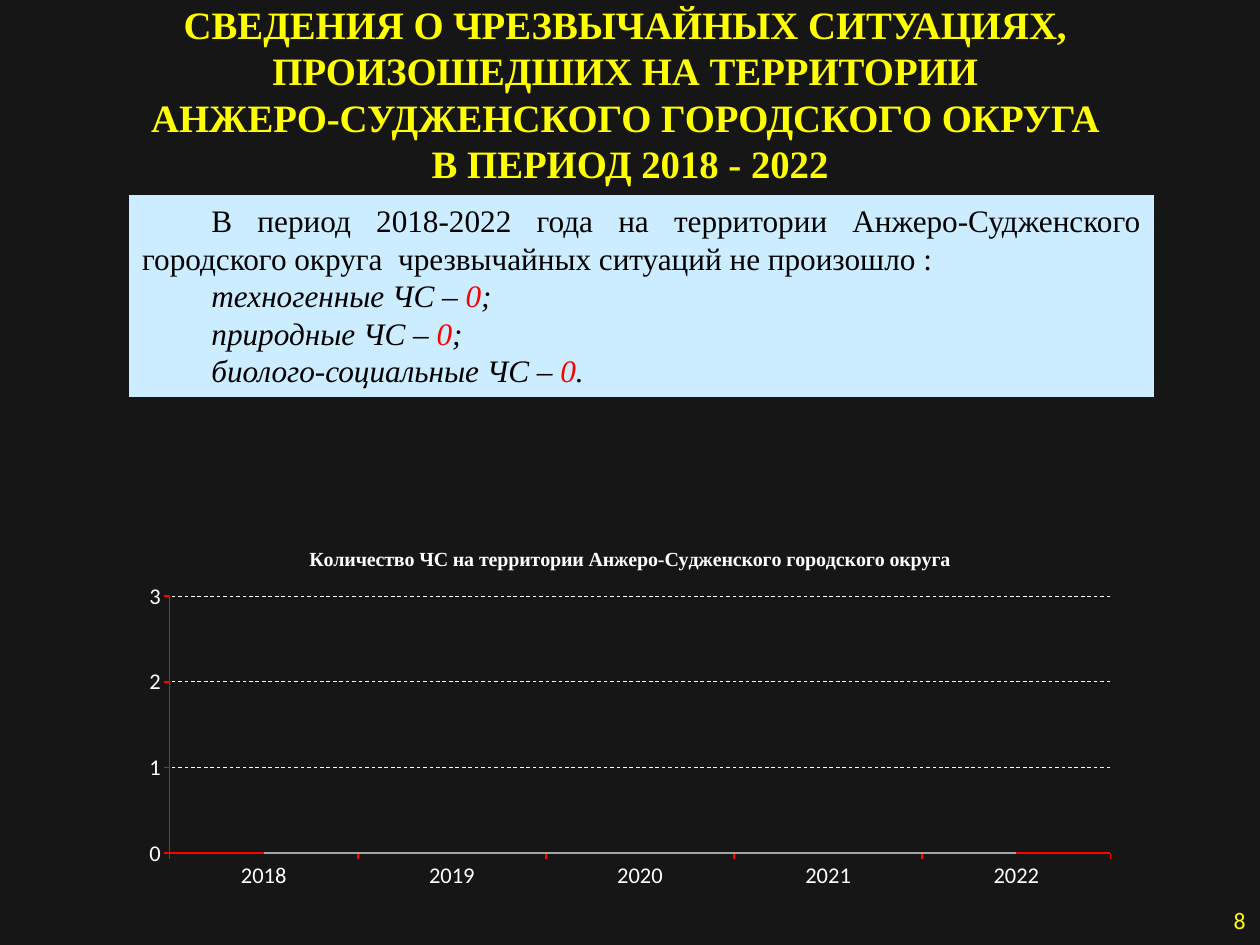
from lxml import etree
from pptx import Presentation
from pptx import util as u
from pptx.chart.data import CategoryChartData
from pptx.dml.color import RGBColor
from pptx.enum import chart as ch, dml, text
from pptx.oxml import parse_xml
from pptx.oxml.ns import nsdecls, qn

THEME = {
    "back": "171616", "head": "FFFF00", "panel": "CCECFF", "ink": "000000",
    "mark": "FF0000", "light": "FFFFFF", "lines": ["C2DFFD", "F29054", "A5A5A5"],
    "serif": "Times New Roman", "sans": "Calibri",
    "title": 31, "body": 25, "num": 19, "axis": 18, "label": 16,
}

deck = Presentation()
deck.slide_width, deck.slide_height = u.Inches(14), u.Inches(10.5)
COL, ROW = deck.slide_width / 100, deck.slide_height / 100


def place(box, x, y, w, h):
    """Set a text box on the 100 x 100 grid, with its margins."""
    box.left, box.top = int(x * COL), int(y * ROW)
    box.width, box.height = int(w * COL), int(h * ROW)
    frame = box.text_frame
    frame.word_wrap = True
    frame.auto_size = text.MSO_AUTO_SIZE.NONE
    frame.margin_left = frame.margin_right = u.Inches(0.16)
    frame.margin_top = frame.margin_bottom = u.Inches(0.08)
    return frame


def style(font, face, size, color, bold=False):
    font.name, font.size, font.bold = THEME[face], u.Pt(THEME[size]), bold
    font.color.rgb = RGBColor.from_string(THEME[color])


slide = deck.slides.add_slide(deck.slide_layouts[1])
slide.background.fill.solid()
slide.background.fill.fore_color.rgb = RGBColor.from_string(THEME["back"])

# Title
head = place(slide.shapes.title, 0, 1.33, 100, 17.14)
head.vertical_anchor = text.MSO_ANCHOR.MIDDLE
head.text = "\n".join([
    "СВЕДЕНИЯ О ЧРЕЗВЫЧАЙНЫХ СИТУАЦИЯХ, ",
    "ПРОИЗОШЕДШИХ НА ТЕРРИТОРИИ ",
    "АНЖЕРО-СУДЖЕНСКОГО ГОРОДСКОГО ОКРУГА ",
    "В ПЕРИОД 2018 - 2022",
])
for para in head.paragraphs:
    para.alignment = text.PP_ALIGN.CENTER
    style(para.runs[0].font, "serif", "title", "head", True)

# Summary panel
panel = slide.placeholders[1]
body = place(panel, 10.14, 20.57, 81.5, 21.52)
body.vertical_anchor = text.MSO_ANCHOR.TOP
panel.fill.solid()
panel.fill.fore_color.rgb = RGBColor.from_string(THEME["panel"])
panel.line.color.rgb = RGBColor.from_string(THEME["back"])
panel.line.width = u.Pt(1.5)

items = [
    ("В период 2018-2022 года на территории Анжеро-Судженского городского округа  "
     "чрезвычайных ситуаций не произошло : ",),
    ("техногенные ЧС – ", "0", "; "),
    ("природные ЧС – ", "0", "; "),
    ("биолого-социальные ЧС – ", "0", ". "),
]
for i, parts in enumerate(items):
    para = body.add_paragraph() if i else body.paragraphs[0]
    para.alignment = text.PP_ALIGN.JUSTIFY
    para.space_before = u.Pt(0)
    props = para._p.get_or_add_pPr()
    props.set("marL", "0")
    props.set("indent", str(u.Inches(0.77)))
    etree.SubElement(props, qn("a:buNone"))
    for part in parts:
        run = para.add_run()
        run.text = part
        style(run.font, "serif", "body", "mark" if part == "0" else "ink")
        run.font.italic = i > 0

# Chart
data = CategoryChartData()
data.categories = ["2018", "2019", "2020", "2021", "2022"]
for n in (1, 2, 3):
    data.add_series(f"Series {n}", [0] * 5)
chart = slide.shapes.add_chart(
    ch.XL_CHART_TYPE.LINE, int(10.29 * COL), int(56.1 * ROW),
    int(79.43 * COL), int(38.86 * ROW), data).chart
style(chart.font, "sans", "axis", "light")
chart.has_legend = False
chart.has_title = True
label = chart.chart_title.text_frame
label.text = "Количество ЧС на территории Анжеро-Судженского городского округа"
style(label.paragraphs[0].runs[0].font, "serif", "label", "light", True)

for line, color in zip(chart.plots[0].series, THEME["lines"]):
    line.smooth = False
    line.marker.style = ch.XL_MARKER_STYLE.NONE
    line.format.line.width = u.Pt(1.5)
    line.format.line.color.rgb = RGBColor.from_string(color)

# Axes and grid
span = chart.value_axis
for axis in (chart.category_axis, span):
    axis.major_tick_mark = ch.XL_TICK_MARK.OUTSIDE
    axis.minor_tick_mark = ch.XL_TICK_MARK.NONE
    axis.format.line.width = u.Pt(1.25)
    axis.format.line.color.rgb = RGBColor.from_string(THEME["mark"])
span.minimum_scale, span.maximum_scale, span.major_unit = 0, 3, 1
span.has_major_gridlines = True
grid = span.major_gridlines.format.line
grid.width = u.Pt(0)
grid.color.rgb = RGBColor.from_string(THEME["light"])
grid.dash_style = dml.MSO_LINE.DASH

# Plot area as shares of the chart
area = chart._chartSpace.chart.plotArea
for old in area.findall(qn("c:layout")):
    area.remove(old)
shares = {"x": 0.04, "y": 0.18, "w": 0.94, "h": 0.7}
rules = "".join(f'<c:{k} val="{v}"/>' for k, v in shares.items())
area.insert(0, parse_xml(
    f'<c:layout {nsdecls("c")}><c:manualLayout><c:layoutTarget val="inner"/>'
    f'<c:xMode val="edge"/><c:yMode val="edge"/>{rules}</c:manualLayout></c:layout>'))

# Page number
page = place(slide.shapes.add_textbox(0, 0, 0, 0), 76.64, 94.67, 23.36, 5.33)
page.vertical_anchor = text.MSO_ANCHOR.MIDDLE
page.text = "8"
page.paragraphs[0].alignment = text.PP_ALIGN.RIGHT
style(page.paragraphs[0].runs[0].font, "sans", "num", "head")

deck.save("out.pptx")
